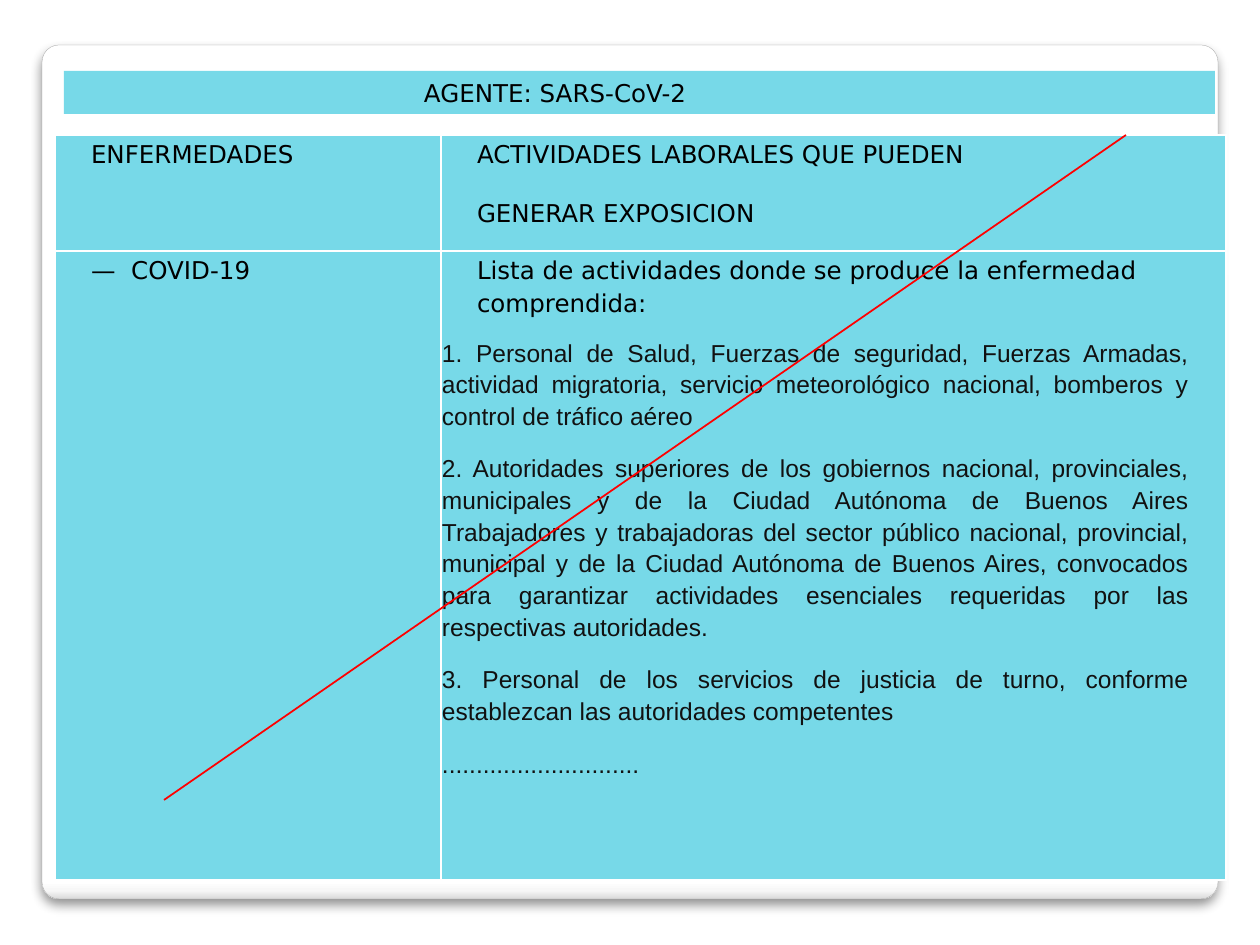
from lxml import etree
from pptx import Presentation
from pptx import util as u
from pptx.dml.color import RGBColor
from pptx.enum import shapes, text
from pptx.oxml import ns

COLORS = {"panel": "77D9E8", "ink": "000000", "body": "111111",
          "edge": "A4A4A4", "strike": "FF0000"}
CARD_STOPS = [(0, "FFFFFF"), (98, "FFFFFF"), (99, "F7F7F7"), (100, "DADADA")]
HEADING_FONT, BODY_FONT = "DejaVu Sans", "Arial"
HEADINGS = [["ENFERMEDADES"],
            ["ACTIVIDADES LABORALES QUE PUEDEN", "GENERAR EXPOSICION"]]
DISEASE = "—  COVID-19"
INTRO = "Lista de actividades donde se produce la enfermedad comprendida:"
ACTIVITIES = [
    "1. Personal de Salud, Fuerzas de seguridad, Fuerzas Armadas, actividad "
    "migratoria, servicio meteorológico nacional, bomberos y control de tráfico aéreo",
    "2. Autoridades superiores de los gobiernos nacional, provinciales, municipales "
    "y de la Ciudad Autónoma de Buenos Aires Trabajadores y trabajadoras del sector "
    "público nacional, provincial, municipal y de la Ciudad Autónoma de Buenos Aires, "
    "convocados para garantizar actividades esenciales requeridas por las respectivas "
    "autoridades.",
    "3. Personal de los servicios de justicia de turno, conforme establezcan las "
    "autoridades competentes",
    ".............................",
]


def px(length):
    """Turn pixels at 126 to the inch into EMU."""
    return u.Emu(round(length * 914400 / 126))


def paint(fill, name):
    """Give a fill one solid named colour."""
    fill.solid()
    fill.fore_color.rgb = RGBColor.from_string(COLORS[name])


def add_child(parent, tag, **attributes):
    """Append a DrawingML element with its attributes."""
    values = {key: str(value) for key, value in attributes.items()}
    return etree.SubElement(parent, ns.qn("a:" + tag), values)


def add_span(para, words, font, color):
    """Add one formatted run to a paragraph."""
    span = para.add_run()
    span.text = words
    span.font.name = font
    span.font.size = u.Pt(14)
    span.font.color.rgb = RGBColor.from_string(COLORS[color])


def add_card(page):
    """Add the rounded card with its graded fill and soft shadow."""
    card = page.shapes.add_shape(shapes.MSO_SHAPE.ROUNDED_RECTANGLE,
                                 px(42), px(45), px(1176), px(854))
    card.adjustments[0] = 0.02
    card.fill.gradient()
    card.fill.gradient_angle = 270
    stops = card.element.spPr.find(".//" + ns.qn("a:gsLst"))
    for stop in list(stops):
        stops.remove(stop)
    for position, color in CARD_STOPS:
        add_child(add_child(stops, "gs", pos=position * 1000), "srgbClr", val=color)
    paint(card.line.fill, "edge")
    card.line.width = u.Pt(0.16)
    effects = add_child(card.element.spPr, "effectLst")
    shadow = add_child(effects, "outerShdw", blurRad=u.Pt(6), dist=u.Pt(4),
                       dir=5400000, algn="t", rotWithShape=0)
    add_child(add_child(shadow, "srgbClr", val=COLORS["ink"]), "alpha", val=44000)


def format_title(page):
    """Turn the title placeholder into the agent banner above the card."""
    title = page.shapes.title
    title.left, title.top, title.width, title.height = px(64), px(71), px(1151), px(43)
    paint(title.fill, "panel")
    frame = title.text_frame
    frame.auto_size = text.MSO_AUTO_SIZE.NONE
    frame.vertical_anchor = text.MSO_ANCHOR.MIDDLE
    frame.margin_left = px(360)
    para = frame.paragraphs[0]
    para.alignment = text.PP_ALIGN.LEFT
    add_span(para, "AGENTE: SARS-CoV-2", HEADING_FONT, "ink")
    page.shapes.element.append(title.element)


def fill_cell(cell, headings, activities=()):
    """Fill a cell with indented headings, then justified activities."""
    paint(cell.fill, "panel")
    cell.margin_left = cell.margin_top = cell.margin_bottom = px(1)
    cell.margin_right = px(37)
    frame = cell.text_frame
    for index, words in enumerate([*headings, *activities]):
        para = frame.add_paragraph() if index else frame.paragraphs[0]
        para.line_spacing = 1.15
        if index < len(headings):
            para.space_before, para.space_after = u.Pt(5), u.Pt(10)
            para._p.get_or_add_pPr().set("marL", str(px(35)))
            add_span(para, words, HEADING_FONT, "ink")
        else:
            para.space_after = u.Pt(12)
            para.alignment = text.PP_ALIGN.JUSTIFY
            add_span(para, words, BODY_FONT, "body")


def add_activity_table(page):
    """Add the table of diseases and work activities."""
    table = page.shapes.add_table(2, 2, px(55), px(135), px(1171), px(745)).table
    table.first_row = table.horz_banding = False
    for column, width in zip(table.columns, (386, 785)):
        column.width = px(width)
    for row, height in zip(table.rows, (116, 629)):
        row.height = px(height)
    for index, headings in enumerate(HEADINGS):
        fill_cell(table.cell(0, index), headings)
    fill_cell(table.cell(1, 0), [DISEASE])
    fill_cell(table.cell(1, 1), [INTRO], ACTIVITIES)


def add_strike(page):
    """Add the red line that crosses out the table."""
    strike = page.shapes.add_connector(shapes.MSO_CONNECTOR.STRAIGHT,
                                       px(164), px(800), px(1126), px(135))
    paint(strike.line.fill, "strike")
    strike.line.width = u.Pt(1)
    add_child(strike.element.spPr, "effectLst")


def main():
    """Build and save the slide."""
    deck = Presentation()
    deck.slide_width, deck.slide_height = px(1260), px(945)
    page = deck.slides.add_slide(deck.slide_layouts[5])
    add_card(page)
    add_activity_table(page)
    format_title(page)
    add_strike(page)
    deck.save("out.pptx")


if __name__ == "__main__":
    main()
